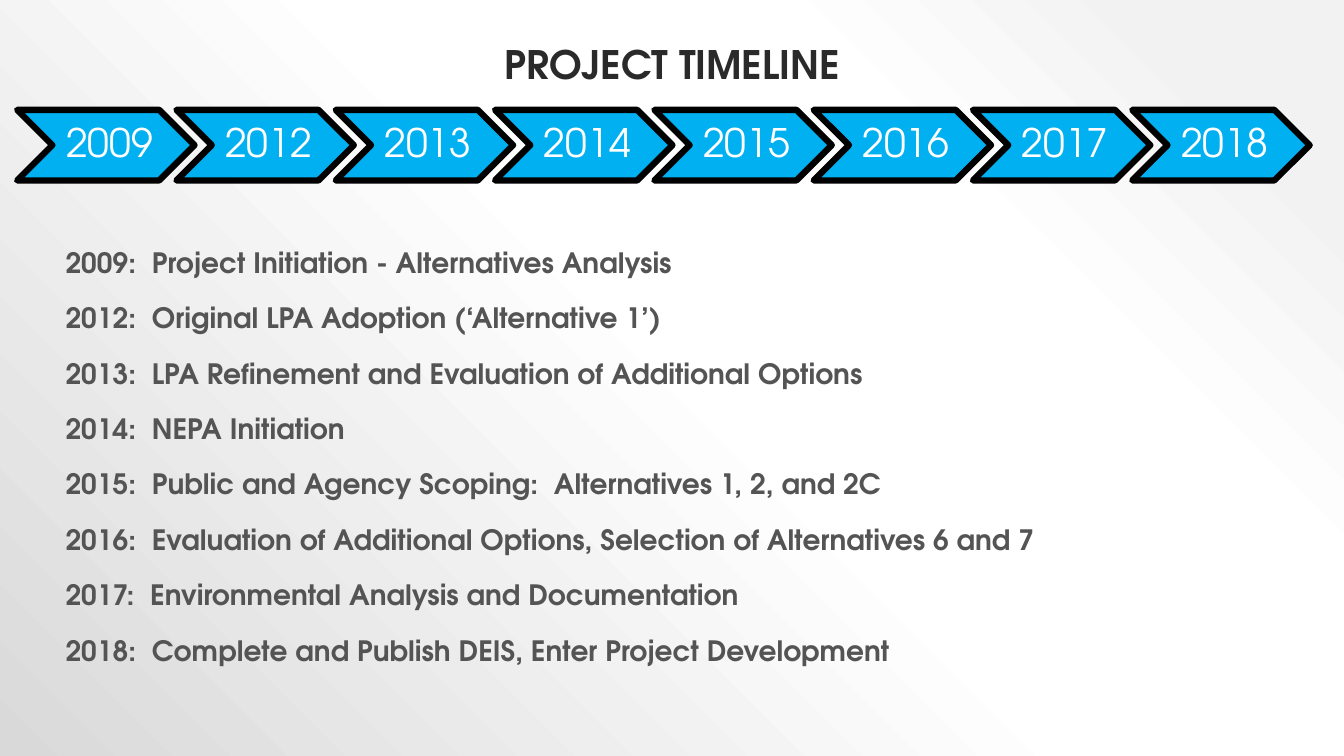
from pptx import Presentation
from pptx.dml.color import RGBColor
from pptx.enum.shapes import MSO_SHAPE as Shape
from pptx.enum.text import MSO_ANCHOR as Anchor, MSO_AUTO_SIZE as Fit, PP_ALIGN as Align
from pptx.oxml import parse_xml
from pptx.oxml.ns import nsdecls
from pptx.util import Inches, Pt

BLUE = RGBColor(0x00, 0xB0, 0xF0)
WHITE = RGBColor(0xFF, 0xFF, 0xFF)
BLACK = RGBColor(0x00, 0x00, 0x00)
DARK = RGBColor(0x2A, 0x2A, 0x2A)
GRAY = RGBColor(0x54, 0x54, 0x54)
STOPS = [(10, "F2F2F2"), (28, "FFFFFF"), (48, "FFFFFF"), (100, "D9D9D9")]

EVENTS = [
    ("2009", "Project Initiation - Alternatives Analysis"),
    ("2012", "Original LPA Adoption (‘Alternative 1’)"),
    ("2013", "LPA Refinement and Evaluation of Additional Options"),
    ("2014", "NEPA Initiation"),
    ("2015", "Public and Agency Scoping:  Alternatives 1, 2, and 2C"),
    ("2016", "Evaluation of Additional Options, Selection of Alternatives 6 and 7"),
    ("2017", "Environmental Analysis and Documentation"),
    ("2018", "Complete and Publish DEIS, Enter Project Development"),
]
LEFT, TOP, STEP = 0.17, 1.09, 1.58
WIDTH, HEIGHT = 1.76, 0.7


class Deck:
    """Holds the font and the current slide, and adds its elements."""

    face = "TeX Gyre Adventor"

    def __init__(self, slide):
        self.slide = slide

    def backdrop(self, stops):
        marks = "".join(
            f'<a:gs pos="{pos * 1000}"><a:srgbClr val="{tint}"/></a:gs>' for pos, tint in stops)
        self.slide.element.cSld.insert(0, parse_xml(
            f'<p:bg {nsdecls("p", "a")}><p:bgPr><a:gradFill rotWithShape="1">'
            f'<a:gsLst>{marks}</a:gsLst><a:path path="circle">'
            '<a:fillToRect l="100000" b="100000"/></a:path></a:gradFill>'
            '<a:effectLst/></p:bgPr></p:bg>'))

    def place(self, item, left, top, width, height):
        item.left, item.top = Inches(left), Inches(top)
        item.width, item.height = Inches(width), Inches(height)

    def style(self, para, size, color, bold):
        para.line_spacing = 0.9
        font = para.font
        font.name, font.size, font.bold = self.face, Pt(size), bold
        font.color.rgb = color

    def title(self, text, *box):
        head = self.slide.shapes.title
        self.place(head, *box)
        frame = head.text_frame
        frame.text = text
        frame.auto_size = Fit.NONE
        frame.vertical_anchor = Anchor.BOTTOM
        para = frame.paragraphs[0]
        para.alignment = Align.CENTER
        self.style(para, 28, DARK, True)

    def list(self, lines, *box):
        body = self.slide.placeholders[1]
        self.place(body, *box)
        frame = body.text_frame
        frame.text = "\n".join(lines)
        frame.auto_size = Fit.NONE
        for row, para in enumerate(frame.paragraphs):
            props = para._p.get_or_add_pPr()
            props.set("marL", str(Inches(0.05)))
            props.set("indent", "0")
            props.append(parse_xml(f'<a:buNone {nsdecls("a")}/>'))
            para.space_before = Pt(18 if row else 0)
            self.style(para, 20, GRAY, True)

    def arrow(self, left, line, weight, fill=None):
        shape = self.slide.shapes.add_shape(
            Shape.CHEVRON, Inches(left), Inches(TOP), Inches(WIDTH), Inches(HEIGHT))
        shape.shadow.inherit = False
        if fill is None:
            shape.fill.background()
        else:
            shape.fill.solid()
            shape.fill.fore_color.rgb = fill
        shape.line.color.rgb = line
        shape.line.width = Pt(weight)

    def label(self, text, left):
        box = self.slide.shapes.add_textbox(
            Inches(left), Inches(TOP), Inches(1.05), Inches(HEIGHT))
        frame = box.text_frame
        frame.word_wrap = True
        frame.vertical_anchor = Anchor.MIDDLE
        frame.margin_left = Inches(0.12)
        frame.margin_right = frame.margin_top = frame.margin_bottom = Inches(0.04)
        frame.text = text
        para = frame.paragraphs[0]
        para.alignment = Align.CENTER
        self.style(para, 28, WHITE, False)


def main():
    show = Presentation()
    show.slide_width, show.slide_height = Inches(13.33), Inches(7.5)
    deck = Deck(show.slides.add_slide(show.slide_layouts[1]))
    deck.backdrop(STOPS)
    deck.title("PROJECT TIMELINE", 1.33, 0.3, 10.67, 0.62)
    deck.list([f"{year}:  {text}" for year, text in EVENTS], 0.5, 2.42, 12.08, 4.58)
    spots = [LEFT + STEP * i for i in range(len(EVENTS))]
    for (year, _), left in zip(EVENTS, spots):
        deck.arrow(left, WHITE, 1, BLUE)
        deck.label(year, left + 0.35)
    for left in spots:
        deck.arrow(left, BLACK, 4.5)
    show.save("out.pptx")


if __name__ == "__main__":
    main()
